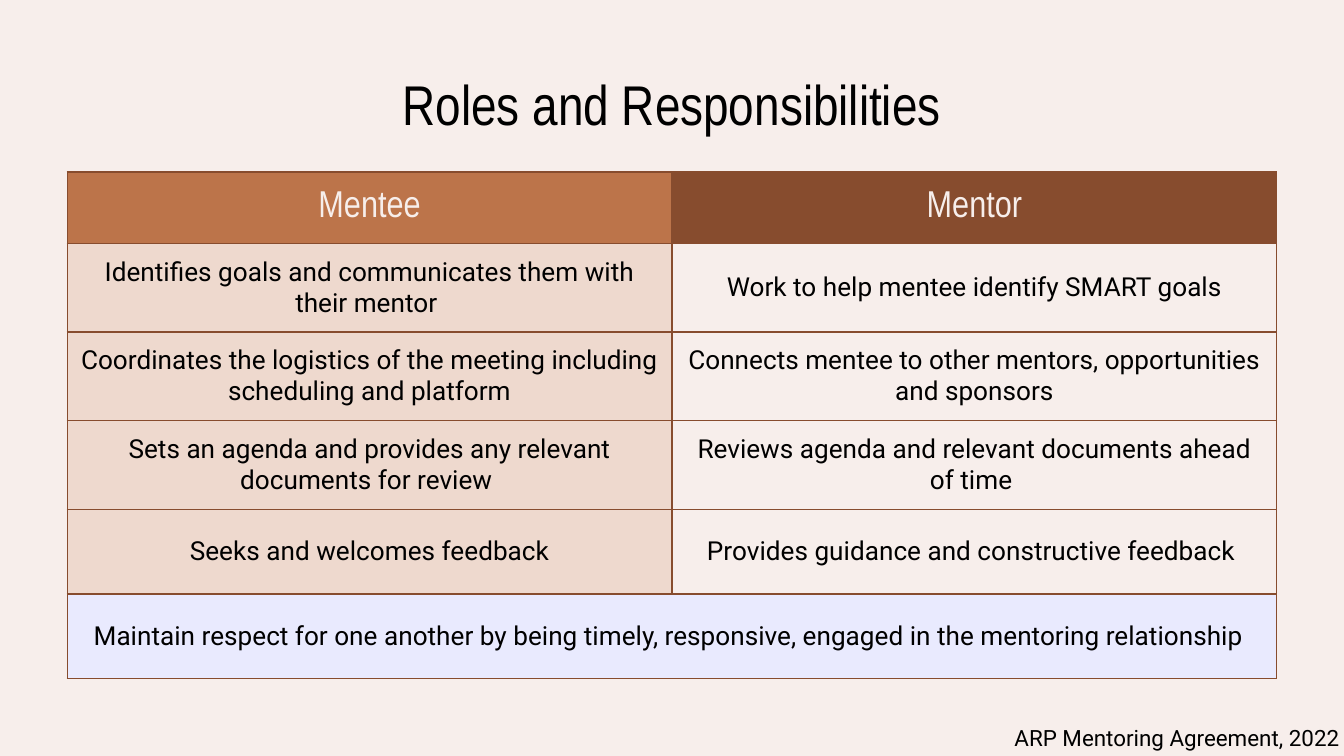
from lxml.etree import SubElement
from pptx import Presentation
from pptx.dml.color import RGBColor
from pptx.enum.text import MSO_ANCHOR, PP_ALIGN
from pptx.oxml.ns import qn
from pptx.util import Inches, Pt

HEADING_FONT = "Arial Narrow"
BODY_FONT = "Roboto"
BLACK = "000000"
CREAM = "F7EEEB"
BROWN = "874C2E"
COPPER = "BC744A"
SAND = "EED9CE"
LAVENDER = "E9EAFE"
INSET = Inches(0.1)

HEADERS = ("Mentee", "Mentor")
DUTIES = [
    ("Identifies goals and communicates them with their mentor ",
     "Work to help mentee identify SMART goals"),
    ("Coordinates the logistics of the meeting including scheduling and platform",
     "Connects mentee to other mentors, opportunities and sponsors"),
    ("Sets an agenda and provides any relevant documents for review ",
     "Reviews agenda and relevant documents ahead of time "),
    ("Seeks and welcomes feedback",
     "Provides guidance and constructive feedback "),
]
SHARED_DUTY = ("Maintain respect for one another by being timely, responsive, "
               "engaged in the mentoring relationship ")


def color(value):
    return RGBColor.from_string(value)


def write(frame, text, font, size, ink, align):
    para = frame.paragraphs[0]
    para.alignment = align
    span = para.add_run()
    span.text = text
    span.font.name = font
    span.font.size = Pt(size)
    span.font.color.rgb = color(ink)


def set_insets(holder):
    holder.margin_left = holder.margin_right = INSET
    holder.margin_top = holder.margin_bottom = INSET


def add_text(page, bounds, text, font, size, align, anchor):
    box = page.shapes.add_textbox(*map(Inches, bounds))
    frame = box.text_frame
    frame.word_wrap = True
    frame.vertical_anchor = anchor
    set_insets(frame)
    write(frame, text, font, size, BLACK, align)


def set_borders(cell):
    properties = cell._tc.get_or_add_tcPr()
    for position, side in enumerate(("lnL", "lnR", "lnT", "lnB")):
        line = SubElement(properties, qn(f"a:{side}"), w=str(Pt(0.75)))
        fill = SubElement(line, qn("a:solidFill"))
        SubElement(fill, qn("a:srgbClr"), val=BROWN)
        properties.insert(position, line)


def fill_cell(cell, text, fill, font=BODY_FONT, size=14, ink=BLACK):
    cell.fill.solid()
    cell.fill.fore_color.rgb = color(fill)
    cell.vertical_anchor = MSO_ANCHOR.MIDDLE
    set_insets(cell)
    write(cell.text_frame, text, font, size, ink, PP_ALIGN.CENTER)


def add_roles_table(page, left, top, width, header_height, row_height):
    row_count = len(DUTIES) + 2
    height = header_height + row_height * (row_count - 1)
    bounds = map(Inches, (left, top, width, height))
    table = page.shapes.add_table(row_count, len(HEADERS), *bounds).table
    table.first_row = table.horz_banding = False
    for column in table.columns:
        column.width = Inches(width / len(HEADERS))
    for index, row in enumerate(table.rows):
        row.height = Inches(row_height if index else header_height)
        for cell in row.cells:
            set_borders(cell)

    for index, (text, fill) in enumerate(zip(HEADERS, (COPPER, BROWN))):
        fill_cell(table.cell(0, index), text, fill, HEADING_FONT, 20, CREAM)
    for row_index, duties in enumerate(DUTIES, start=1):
        for index, (text, fill) in enumerate(zip(duties, (SAND, CREAM))):
            fill_cell(table.cell(row_index, index), text, fill)
    shared = table.cell(row_count - 1, 0)
    shared.merge(table.cell(row_count - 1, len(HEADERS) - 1))
    fill_cell(shared, SHARED_DUTY, LAVENDER)


def main():
    deck = Presentation()
    deck.slide_width = Inches(10)
    deck.slide_height = deck.slide_width * 9 // 16
    page = deck.slides.add_slide(deck.slide_layouts[6])
    page.background.fill.solid()
    page.background.fill.fore_color.rgb = color(CREAM)
    add_roles_table(page, 0.5, 1.28, 9, 0.53, 0.63)
    add_text(page, (0.5, 0.45, 9, 0.63), "Roles and Responsibilities",
             HEADING_FONT, 30, PP_ALIGN.CENTER, MSO_ANCHOR.MIDDLE)
    add_text(page, (7.45, 5.29, 3, 0.4), "ARP Mentoring Agreement, 2022",
             BODY_FONT, 12, PP_ALIGN.LEFT, MSO_ANCHOR.TOP)
    deck.save("out.pptx")


if __name__ == "__main__":
    main()
